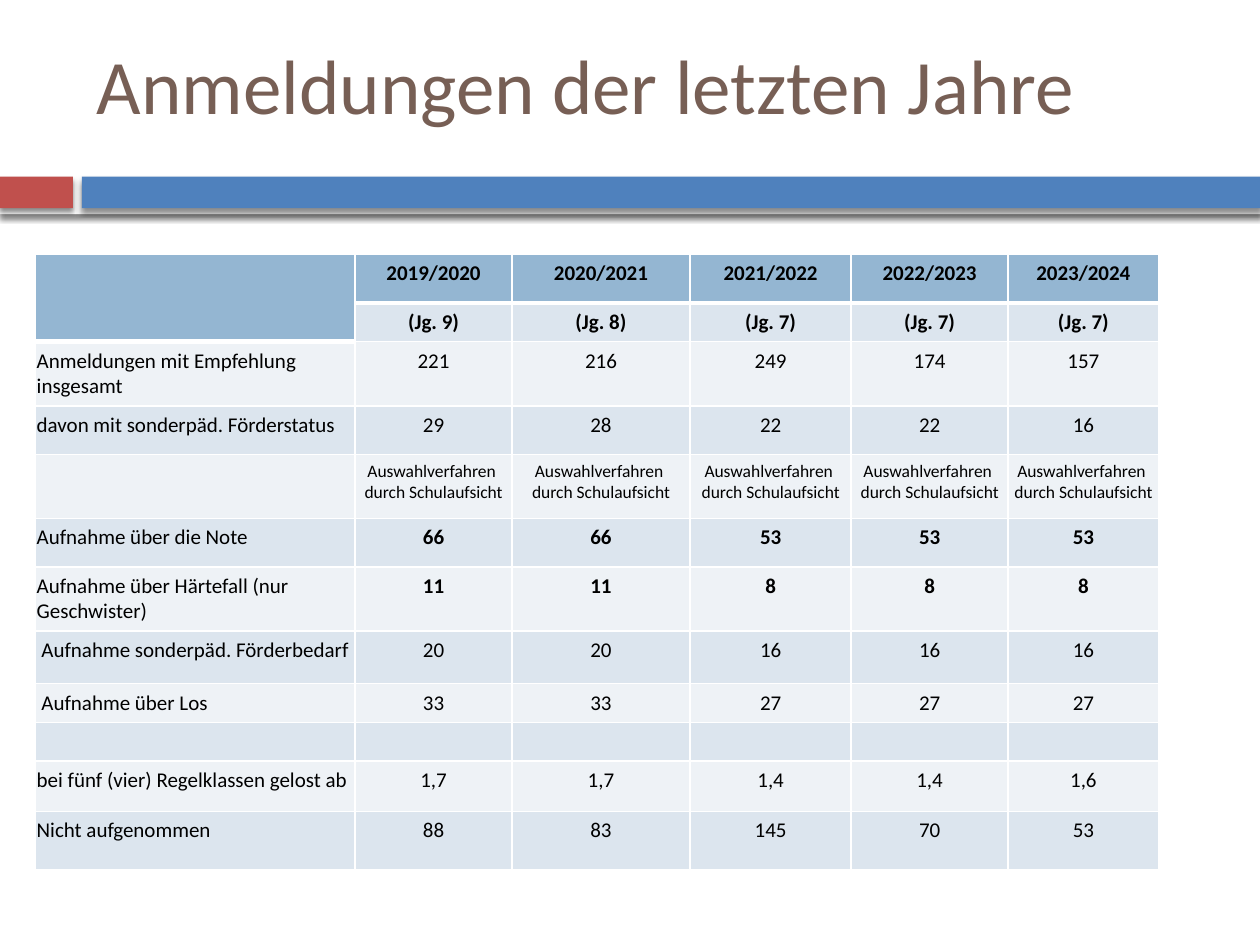
from lxml import etree
from pptx import Presentation
from pptx.dml.color import RGBColor
from pptx.enum.shapes import MSO_SHAPE
from pptx.enum.text import MSO_ANCHOR, MSO_AUTO_SIZE, PP_ALIGN
from pptx.oxml import parse_xml
from pptx.oxml.ns import nsdecls, qn
from pptx.util import Cm, Pt

RECT = MSO_SHAPE.RECTANGLE
MIDDLE = MSO_ANCHOR.MIDDLE
LEFT, CENTER = PP_ALIGN.LEFT, PP_ALIGN.CENTER
NO_FIT = MSO_AUTO_SIZE.NONE

THEME = {
    "font": "Calibri",
    "title": "775F55", "text": "000000", "white": "FFFFFF",
    "red": "C0504D", "blue": "4F81BD",
    "head": "94B6D2", "dark": "DCE5EE", "light": "EEF2F6",
    "big": 44, "body": 12, "small": 10,
    "thin": 0.96, "thick": 3,
}


def style(font, size, color, bold=False):
    values = {"name": THEME["font"], "size": Pt(size), "bold": bold}
    for key, value in values.items():
        setattr(font, key, value)
    font.color.rgb = RGBColor.from_string(THEME[color])


def edge(cell, sides):
    props = cell._tc.get_or_add_tcPr()
    for spot, (side, width) in enumerate(sides.items()):
        props.insert(spot, parse_xml(
            f'<a:ln{side} {nsdecls("a")} w="{Pt(width)}"><a:solidFill>'
            f'<a:srgbClr val="{THEME["white"]}"/></a:solidFill></a:ln{side}>'))


deck = Presentation()
deck.slide_width, deck.slide_height = Cm(25.4), Cm(19.05)
slide = deck.slides.add_slide(deck.slide_layouts[5])

bands = [
    ("white", 0, 3.43, 25.4, 0.89),
    ("red", 0, 3.56, 1.47, 0.64),
    ("blue", 1.65, 3.56, 23.75, 0.64),
]
for color, *box in bands:
    band = slide.shapes.add_shape(RECT, *map(Cm, box))
    band.fill.solid()
    band.fill.fore_color.rgb = RGBColor.from_string(THEME[color])
    band.line.fill.background()
    band._element.spPr.append(parse_xml(
        f'<a:effectLst {nsdecls("a")}><a:outerShdw blurRad="{Pt(3)}" '
        f'dist="{Pt(2.4)}" dir="5400000" rotWithShape="0">'
        f'<a:srgbClr val="{THEME["text"]}"><a:alpha val="45000"/></a:srgbClr>'
        '</a:outerShdw></a:effectLst>'))

title = slide.shapes.title
place = {"left": Cm(1.7), "top": Cm(0.64), "width": Cm(22.66), "height": Cm(2.08)}
for key, value in place.items():
    setattr(title, key, value)
frame = title.text_frame
frame.text = "Anmeldungen der letzten Jahre"
layout = {"auto_size": NO_FIT, "vertical_anchor": MIDDLE, "word_wrap": True}
for key, value in layout.items():
    setattr(frame, key, value)
frame.paragraphs[0].alignment = LEFT
style(frame.paragraphs[0].runs[0].font, THEME["big"], "title")

choice = "Auswahlverfahren \vdurch Schulaufsicht"
rows = [
    (0.98, ["", "2019/2020", "2020/2021", "2021/2022", "2022/2023", "2023/2024"]),
    (0.77, ["", "(Jg. 9)", "(Jg. 8)", "(Jg. 7)", "(Jg. 7)", "(Jg. 7)"]),
    (1.29, ["Anmeldungen mit Empfehlung insgesamt", "221", "216", "249", "174", "157"]),
    (0.98, ["davon mit sonderpäd. Förderstatus", "29", "28", "22", "22", "16"]),
    (1.29, [""] + [choice] * 5),
    (0.98, ["Aufnahme über die Note", "66", "66", "53", "53", "53"]),
    (1.29, ["Aufnahme über Härtefall (nur\nGeschwister)", "11", "11", "8", "8", "8"]),
    (1.06, [" Aufnahme sonderpäd. Förderbedarf", "20", "20", "16", "16", "16"]),
    (0.77, [" Aufnahme über Los", "33", "33", "27", "27", "27"]),
    (0.77, [""] * 6),
    (1.02, ["bei fünf (vier) Regelklassen gelost ab", "1,7", "1,7", "1,4", "1,4", "1,6"]),
    (1.17, ["Nicht aufgenommen", "88", "83", "145", "70", "53"]),
]
widths = [6.45, 3.16, 3.59, 3.25, 3.16, 3.04]
bold_rows = {0, 1, 5, 6}
insets = {"margin_left": Cm(0.03), "margin_right": Cm(0.03),
          "margin_top": Cm(0.13), "margin_bottom": Cm(0.13)}

table = slide.shapes.add_table(
    len(rows), len(widths), Cm(0.71), Cm(5.13),
    Cm(sum(widths)), Cm(sum(high for high, _ in rows))).table
for col, width in zip(table.columns, widths):
    col.width = Cm(width)

for r, (high, texts) in enumerate(rows):
    table.rows[r].height = Cm(high)
    for c, text in enumerate(texts):
        cell = table.cell(r, c)
        for key, value in insets.items():
            setattr(cell, key, value)
        top = r == 0 or (r == 1 and c == 0)
        color = "head" if top else "dark" if r % 2 else "light"
        cell.fill.solid()
        cell.fill.fore_color.rgb = RGBColor.from_string(THEME[color])
        below = r == 1 if c else r == 2
        edge(cell, {"L": THEME["thin"], "R": THEME["thin"],
                    "T": THEME["thick" if below else "thin"],
                    "B": THEME["thick" if top else "thin"]})
        cell.text_frame.text = text
        size = THEME["small" if text == choice else "body"]
        for para in cell.text_frame.paragraphs:
            para.alignment = CENTER if c else LEFT
            for run in para.runs:
                style(run.font, size, "text", c > 0 and r in bold_rows)
            if not text:
                etree.SubElement(para._p, qn("a:endParaRPr"), sz=str(size * 100))

table.cell(0, 0).merge(table.cell(1, 0))
deck.save("out.pptx")
